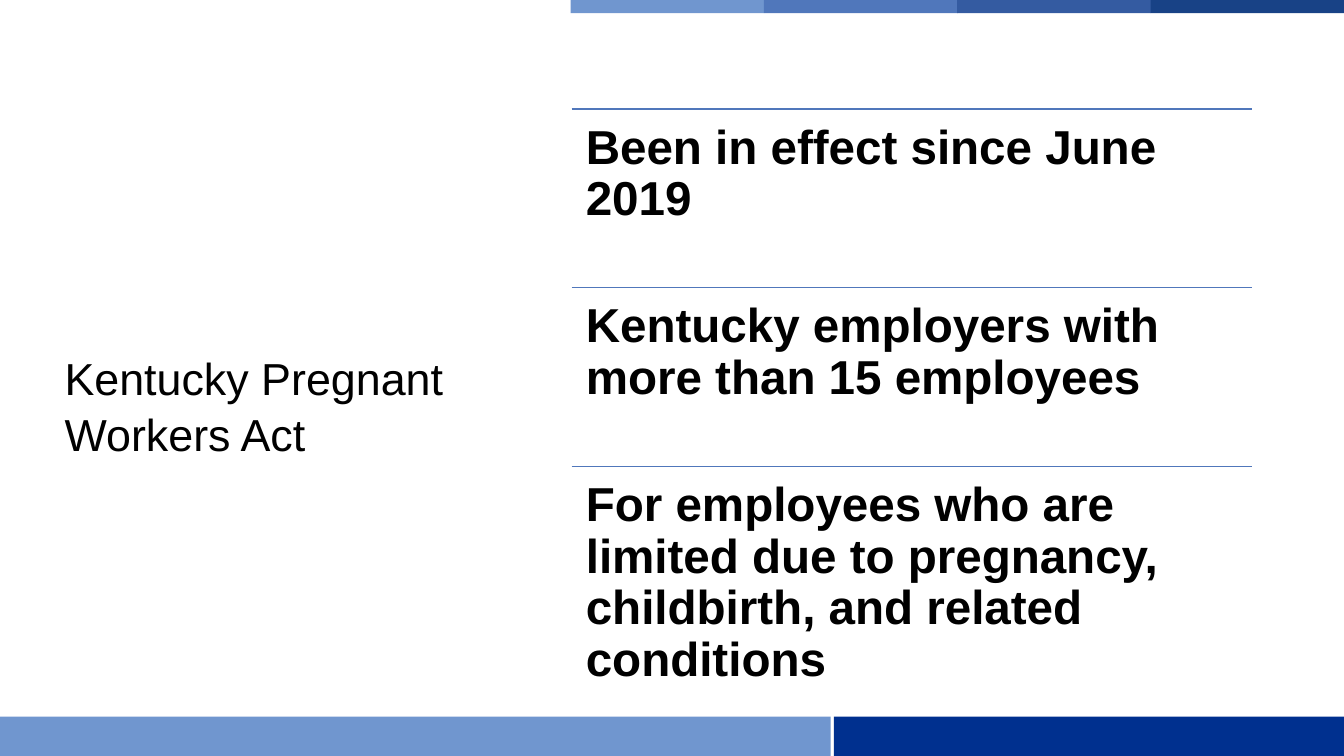
from lxml import etree
from pptx import Presentation
from pptx.dml.color import RGBColor
from pptx.enum import shapes, text
from pptx.oxml import ns
from pptx.util import Inches, Pt

COLORS = {
    "sky": "7096CF",
    "blue": "5077BB",
    "denim": "345BA1",
    "navy": "184286",
    "royal": "00308F",
    "black": "000000",
}
POINTS = [
    "Been in effect since June 2019",
    "Kentucky employers with more than 15 employees",
    "For employees who are limited due to pregnancy, childbirth, and related conditions",
]


def color(name):
    return RGBColor.from_string(COLORS[name])


def write(box, words, size, bold=False, inset=None, spacing=None,
          anchor=text.MSO_ANCHOR.TOP):
    frame = box.text_frame
    frame.word_wrap = True
    frame.auto_size = text.MSO_AUTO_SIZE.NONE
    frame.vertical_anchor = anchor
    if inset is not None:
        frame.margin_left = frame.margin_right = Inches(inset)
        frame.margin_top = frame.margin_bottom = Inches(inset)
    para = frame.paragraphs[0]
    para.alignment = text.PP_ALIGN.LEFT
    para.line_spacing = spacing
    span = para.add_run()
    span.text = words
    span.font.name = "Arial"
    span.font.size = Pt(size)
    span.font.bold = bold
    span.font.color.rgb = color("black")


def add_bar(page, left, top, width, height, fill):
    bar = page.shapes.add_shape(
        shapes.MSO_SHAPE.RECTANGLE,
        Inches(left), Inches(top), Inches(width), Inches(height))
    bar.shadow.inherit = False
    bar.fill.solid()
    bar.fill.fore_color.rgb = color(fill)
    bar.line.fill.background()


def add_rule(page, left, top, width):
    rule = page.shapes.add_connector(
        shapes.MSO_CONNECTOR.STRAIGHT,
        Inches(left), Inches(top), Inches(left + width), Inches(top))
    rule.line.color.rgb = color("blue")
    rule.line.width = Pt(1)
    properties = rule._element.find(ns.qn("p:spPr"))
    etree.SubElement(properties, ns.qn("a:effectLst"))


def add_title(page, words):
    title = page.shapes.title
    title.left, title.top = Inches(0.54), Inches(2.87)
    title.width, title.height = Inches(4.3), Inches(1.75)
    write(title, words, 32, spacing=1.05, anchor=text.MSO_ANCHOR.BOTTOM)


def add_point(page, words, top):
    left, width = 5.67, 6.75
    add_rule(page, left, top, width)
    box = page.shapes.add_textbox(
        Inches(left), Inches(top), Inches(width), Inches(1.77))
    write(box, words, 34, bold=True, inset=0.14, spacing=0.9)


def main():
    deck = Presentation()
    deck.slide_width, deck.slide_height = Inches(13.33), Inches(7.5)
    page = deck.slides.add_slide(deck.slide_layouts[5])

    for index, fill in enumerate(["sky", "blue", "denim", "navy"]):
        add_bar(page, 5.66 + index * 1.917, 0, 1.92, 0.13, fill)
    add_bar(page, 0, 7.11, 8.24, 0.39, "sky")
    add_bar(page, 8.27, 7.11, 5.06, 0.39, "royal")

    add_title(page, "Kentucky Pregnant Workers Act")
    for index, words in enumerate(POINTS):
        add_point(page, words, 1.08 + index * 1.775)
    deck.save("out.pptx")


if __name__ == "__main__":
    main()
